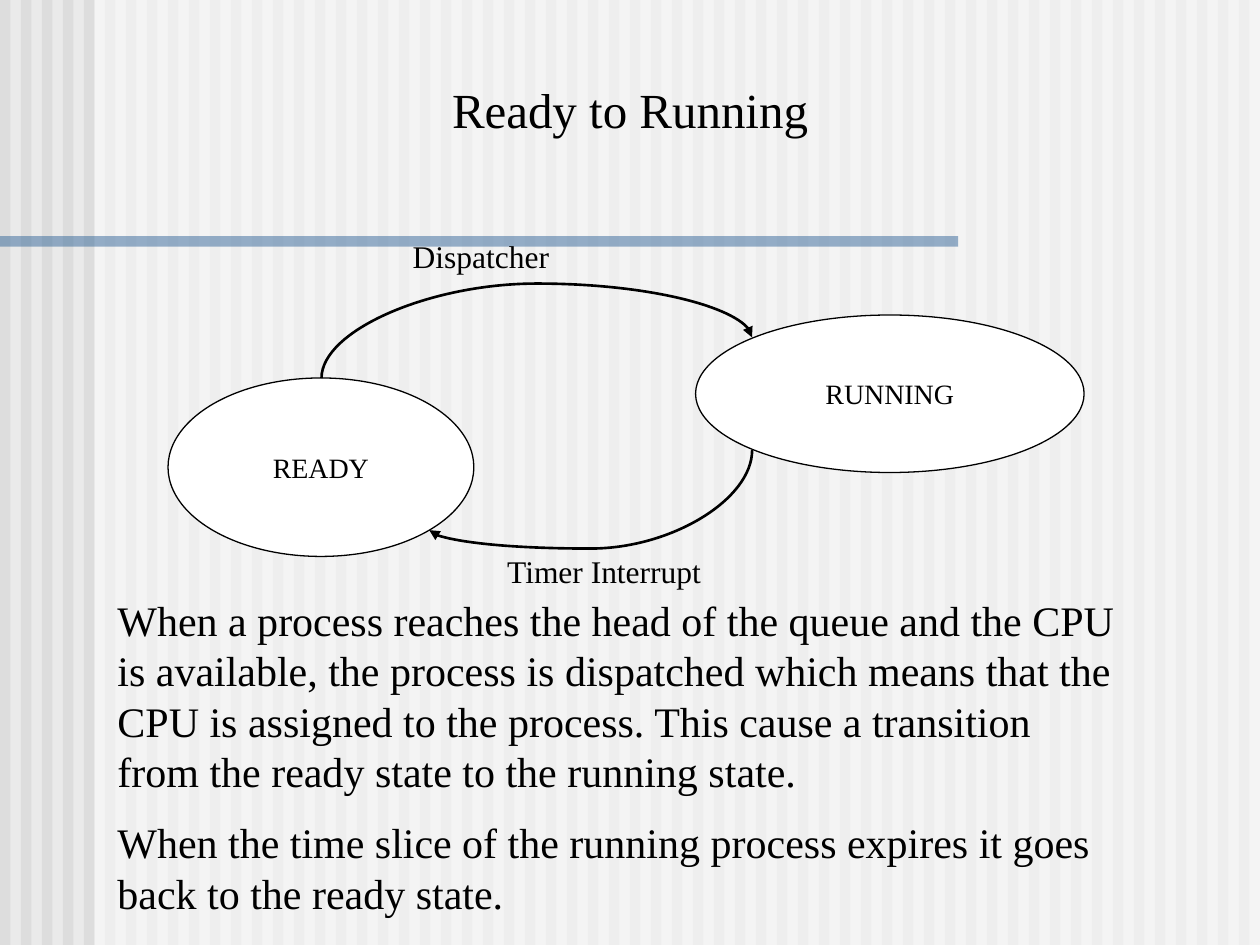
from dataclasses import dataclass

from lxml.etree import SubElement
from pptx import Presentation
from pptx.dml.color import RGBColor
from pptx.enum.shapes import MSO_CONNECTOR, MSO_SHAPE
from pptx.enum.text import MSO_ANCHOR, MSO_AUTO_SIZE, PP_ALIGN
from pptx.oxml.ns import qn
from pptx.util import Emu, Pt

PX = 9525  # EMU per px, 96 px to the inch
W, H = 960, 720
FONT = "Times New Roman"
COLORS = {"bg": "EAEAEA", "stripe": "DDDDDD", "white": "FFFFFF",
          "bar": "336699", "ink": "000000"}


@dataclass
class Box:
    x: int
    y: int
    w: int
    h: int


@dataclass
class State:
    name: str
    box: Box


@dataclass
class Curve:
    ready_site: int
    running_site: int
    start: tuple[int, int]  # on READY
    end: tuple[int, int]  # on RUNNING
    lane: int  # y of the flat part of the curve
    rot: int
    flip: bool
    arrow: str


@dataclass
class Label:
    box: Box
    paragraphs: list[str]
    size: int
    align: PP_ALIGN = PP_ALIGN.LEFT


def px(n: float) -> Emu:
    return Emu(round(n * PX))


def rgb(name: str) -> RGBColor:
    return RGBColor.from_string(COLORS[name])


def place(b: Box) -> tuple[Emu, Emu, Emu, Emu]:
    return px(b.x), px(b.y), px(b.w), px(b.h)


def write(tf, paragraphs: list[str], *, size: int, align=PP_ALIGN.LEFT,
          color="ink", wrap=True, gap=0) -> None:
    tf.word_wrap = wrap
    for i, text in enumerate(paragraphs):
        p = tf.add_paragraph() if i else tf.paragraphs[0]
        p.alignment = align
        if i:
            p.space_before = Pt(gap)
        r = p.add_run()
        r.text = text
        r.font.name, r.font.size = FONT, Pt(size)
        r.font.color.rgb = rgb(color)


def add_shape(s, kind, b: Box, fill: str, *, alpha=100, outlined=False):
    sp = s.shapes.add_shape(kind, *place(b))
    sp.shadow.inherit = False
    sp.fill.solid()
    sp.fill.fore_color.rgb = rgb(fill)
    if alpha < 100:
        clr = sp.fill._xPr.find(qn("a:solidFill"))[0]
        SubElement(clr, qn("a:alpha"), val=str(alpha * 1000))
    if outlined:
        sp.line.color.rgb = rgb("ink")
        sp.line.width = Pt(0.75)
    else:
        sp.line.fill.background()
    return sp


def add_state(s, state: State):
    sp = add_shape(s, MSO_SHAPE.OVAL, state.box, "white", outlined=True)
    sp.text_frame.vertical_anchor = MSO_ANCHOR.MIDDLE
    write(sp.text_frame, [state.name], size=16, align=PP_ALIGN.CENTER, wrap=False)
    return sp


def add_curve(s, c: Curve, ready, running) -> None:
    (x0, y0), (x1, y1) = c.start, c.end
    dx, dy = x1 - x0, y0 - y1
    cn = s.shapes.add_connector(MSO_CONNECTOR.CURVE, 0, 0, 0, 0)
    # The box is turned a quarter, so its width is the rise and its height the run
    cn.left, cn.top = px((x0 + x1 - dy) / 2), px((y0 + y1 - dx) / 2)
    cn.width, cn.height = px(dy), px(dx)
    cn.line.color.rgb = rgb("ink")
    cn.line.width = Pt(1.5)
    el = cn._element
    pr = el.spPr
    xfrm = pr.find(qn("a:xfrm"))
    xfrm.set("rot", str(c.rot * 60000))
    if c.flip:
        xfrm.set("flipH", "1")
        xfrm.set("flipV", "1")
    bend = round((y0 - c.lane) / dy * 100000)
    guides = pr.find(qn("a:prstGeom")).find(qn("a:avLst"))
    SubElement(guides, qn("a:gd"), name="adj1", fmla=f"val {bend}")
    SubElement(pr.find(qn("a:ln")), qn(f"a:{c.arrow}"), type="triangle")
    SubElement(pr, qn("a:effectLst"))
    # Glue both ends to the ovals
    links = el.find(qn("p:nvCxnSpPr")).find(qn("p:cNvCxnSpPr"))
    for tag, sp, site in (("a:stCxn", ready, c.ready_site),
                          ("a:endCxn", running, c.running_site)):
        SubElement(links, qn(tag), id=str(sp.shape_id), idx=str(site))


def add_label(s, label: Label) -> None:
    tf = s.shapes.add_textbox(*place(label.box)).text_frame
    tf.auto_size = MSO_AUTO_SIZE.SHAPE_TO_FIT_TEXT
    write(tf, label.paragraphs, size=label.size, align=label.align,
          gap=label.size / 2)


READY = State("READY", Box(128, 288, 233, 136))
RUNNING = State("RUNNING", Box(530, 240, 296, 120))
CURVES = [
    Curve(0, 1, (245, 288), (573, 257), 216, 270, False, "tailEnd"),
    Curve(5, 3, (327, 404), (573, 343), 418, 90, True, "headEnd"),
]
LABELS = [
    Label(Box(305, 176, 168, 86), ["Dispatcher"], 18),
    Label(Box(80, 448, 784, 259), [
        "When a process reaches the head of the queue and the CPU is available, "
        "the process is dispatched which means that the CPU is assigned to the "
        "process. This cause a transition from the ready state to the running state.",
        "When the time slice of the running process expires it goes back to the "
        "ready state.",
    ], 24),
    Label(Box(377, 416, 192, 38), ["Timer Interrupt"], 18),
    Label(Box(224, 56, 512, 55), ["Ready to Running"], 28, PP_ALIGN.CENTER),
]


def main() -> None:
    prs = Presentation()
    prs.slide_width, prs.slide_height = px(W), px(H)
    s = prs.slides.add_slide(prs.slide_layouts[6])

    # Striped background, veil and title bar
    s.background.fill.solid()
    s.background.fill.fore_color.rgb = rgb("bg")
    for x in range(0, W, 16):
        add_shape(s, MSO_SHAPE.RECTANGLE, Box(x, 0, 8, H), "stripe")
    add_shape(s, MSO_SHAPE.RECTANGLE, Box(72, 0, W - 72, H), "white", alpha=50)
    add_shape(s, MSO_SHAPE.RECTANGLE, Box(0, 180, 730, 8), "bar", alpha=50)

    # State diagram
    ready, running = add_state(s, READY), add_state(s, RUNNING)
    for curve in CURVES:
        add_curve(s, curve, ready, running)

    # Title, labels and explanation
    for label in LABELS:
        add_label(s, label)

    prs.save("out.pptx")


if __name__ == "__main__":
    main()
